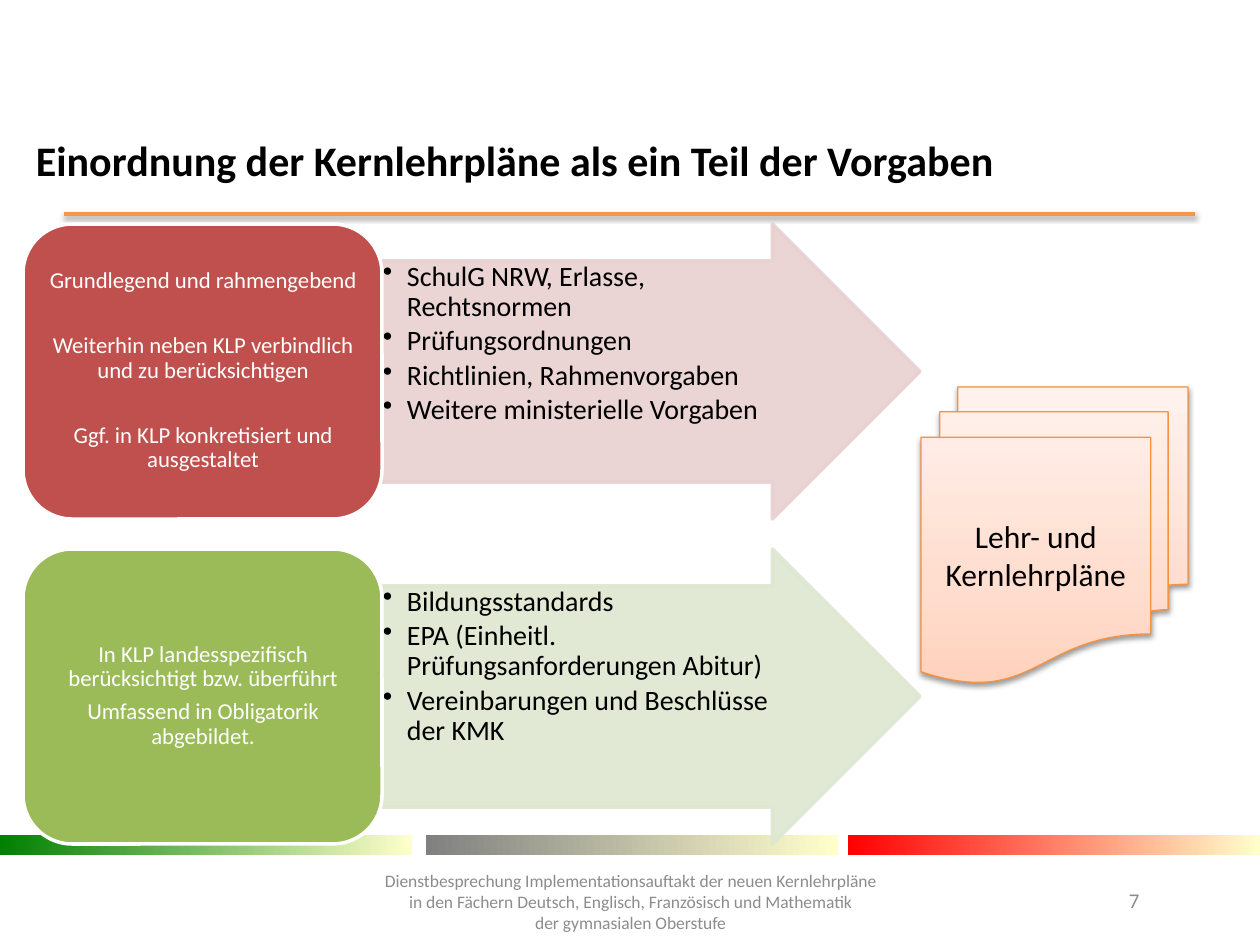
from copy import deepcopy

from lxml.etree import SubElement
from pptx import Presentation
from pptx.dml.color import RGBColor
from pptx.enum.shapes import MSO_CONNECTOR, MSO_SHAPE
from pptx.enum.text import MSO_ANCHOR, PP_ALIGN
from pptx.oxml.ns import qn
from pptx.util import Pt

EMU_PER_PX = 914400 / 126
BLACK, WHITE, GREY, CREAM = "000000", "FFFFFF", "8C8C8C", "FFFFCC"


def px(length):
    return round(length * EMU_PER_PX)


def color(value):
    return RGBColor.from_string(value)


def apply(target, values):
    for name, value in values.items():
        setattr(target, name, value)


class SlideBuilder:
    font_name = "Calibri"

    def __init__(self, slide):
        self.slide = slide

    def effects(self, shape, shadow):
        properties = shape._element.spPr
        for old in properties.findall(qn("a:effectLst")):
            properties.remove(old)
        effect_list = SubElement(properties, qn("a:effectLst"))
        if shadow:
            outer = SubElement(effect_list, qn("a:outerShdw"), blurRad="40000",
                               dist="20000", dir="5400000", rotWithShape="0")
            black = SubElement(outer, qn("a:srgbClr"), val=BLACK)
            SubElement(black, qn("a:alpha"), val="38000")

    def gradient(self, shape, stops, angle):
        fill = shape.fill
        fill.gradient()
        fill.gradient_angle = angle
        stop_list = shape._element.spPr.find(".//" + qn("a:gsLst"))
        while len(stop_list) < len(stops):
            stop_list.append(deepcopy(stop_list[-1]))
        for stop, (position, value) in zip(fill.gradient_stops, stops):
            stop.position = position
            stop.color.rgb = color(value)

    def shape(self, kind, box, fill, line=None, width=2, angle=0,
              opacity=None, adjustments=(), shadow=False):
        shape = self.slide.shapes.add_shape(kind, *map(px, box))
        if isinstance(fill, str):
            shape.fill.solid()
            shape.fill.fore_color.rgb = color(fill)
        else:
            self.gradient(shape, fill, angle)
        if line:
            shape.line.color.rgb = color(line)
            shape.line.width = Pt(width)
        else:
            shape.line.fill.background()
        for index, value in enumerate(adjustments):
            shape.adjustments[index] = value
        if opacity:
            for element in shape._element.spPr.iter(qn("a:srgbClr")):
                SubElement(element, qn("a:alpha"), val=str(opacity * 1000))
        self.effects(shape, shadow)
        return shape

    def line(self, start, end, value, width):
        line = self.slide.shapes.add_connector(
            MSO_CONNECTOR.STRAIGHT, *map(px, start + end))
        line.line.color.rgb = color(value)
        line.line.width = Pt(width)
        self.effects(line, True)

    def label(self, shape, paragraphs, size, value, align=PP_ALIGN.LEFT,
              anchor=MSO_ANCHOR.MIDDLE, insets=(13, 6), bold=False,
              spacing=1.0, gap=0, bullet_indent=0):
        frame = shape.text_frame
        side, edge = map(px, insets)
        apply(frame, dict(word_wrap=True, vertical_anchor=anchor,
                          margin_left=side, margin_right=side,
                          margin_top=edge, margin_bottom=edge))
        for index, text in enumerate(paragraphs):
            paragraph = frame.add_paragraph() if index else frame.paragraphs[0]
            paragraph.text = text
            if bullet_indent:
                properties = paragraph._p.get_or_add_pPr()
                properties.set("marL", str(px(bullet_indent)))
                properties.set("indent", str(-px(bullet_indent)))
                SubElement(properties, qn("a:buChar"), char="•")
            apply(paragraph, dict(alignment=align, line_spacing=spacing,
                                  space_before=Pt(gap if index else 0)))
            for run in paragraph.runs:
                apply(run.font, dict(name=self.font_name, size=Pt(size), bold=bold))
                run.font.color.rgb = color(value)

    def text(self, box, paragraphs, size, value, **style):
        shape = self.slide.shapes.add_textbox(*map(px, box))
        self.label(shape, paragraphs, size, value, **style)

    def row(self, top, card_color, arrow_color, card_texts, card_gap, bullets):
        """One card with the arrow that leads away from it."""
        self.shape(MSO_SHAPE.RIGHT_ARROW, (382, top, 538, 295), arrow_color,
                   arrow_color, opacity=90, adjustments=(0.75, 0.5))
        self.text((382, top + 37, 428, 221), bullets, 16, BLACK,
                  anchor=MSO_ANCHOR.TOP, insets=(1, 1), spacing=0.9,
                  gap=2.4, bullet_indent=24)
        self.shape(MSO_SHAPE.ROUNDED_RECTANGLE, (23, top, 359, 295),
                   card_color, WHITE)
        self.text((38, top + 14, 330, 266), card_texts, 13, WHITE,
                  align=PP_ALIGN.CENTER, insets=(6, 4), spacing=0.9, gap=card_gap)


def main():
    presentation = Presentation()
    presentation.slide_width = px(1260)
    presentation.slide_height = px(945)
    slide = presentation.slides.add_slide(presentation.slide_layouts[6])
    builder = SlideBuilder(slide)

    # Rule and footer bars
    builder.line((64, 214), (1195, 214), "F79646", 2)
    for left, value in ((0, "008000"), (426, "808080"), (848, "FF0000")):
        builder.shape(MSO_SHAPE.RECTANGLE, (left, 835, 412, 20),
                      ((0, value), (1, CREAM)))

    # Title
    builder.text((23, 135, 1134, 49),
                 ["Einordnung der Kernlehrpläne als ein Teil der Vorgaben"],
                 24, BLACK, bold=True)

    # Stack of curricula
    documents = builder.shape(
        MSO_SHAPE.FLOWCHART_MULTIDOCUMENT, (921, 387, 267, 296),
        ((0, "FFD2BD"), (0.35, "FFDED0"), (1, "FFF2ED")),
        line="F69240", width=0.75, angle=90, shadow=True)
    builder.label(documents, ["Lehr- und Kernlehrpläne"], 18, BLACK,
                  align=PP_ALIGN.CENTER)

    # Requirements
    builder.row(
        224, "C0504D", "E8D0D0",
        ["Grundlegend und rahmengebend",
         "Weiterhin neben KLP verbindlich und zu berücksichtigen",
         "Ggf. in KLP konkretisiert und ausgestaltet"], 23,
        ["SchulG NRW, Erlasse, Rechtsnormen", "Prüfungsordnungen",
         "Richtlinien, Rahmenvorgaben", "Weitere ministerielle Vorgaben"])
    builder.row(
        549, "9BBB59", "DEE7D1",
        ["In KLP landesspezifisch berücksichtigt bzw. überführt",
         "Umfassend in Obligatorik abgebildet."], 4.6,
        ["Bildungsstandards", "EPA (Einheitl. Prüfungsanforderungen Abitur)",
         "Vereinbarungen und Beschlüsse der KMK"])

    # Footer
    builder.text((1116, 882, 81, 50), ["7"], 12, GREY, anchor=MSO_ANCHOR.TOP)
    builder.text((323, 866, 615, 71),
                 ["Dienstbesprechung Implementationsauftakt der neuen Kernlehrpläne\v"
                  "in den Fächern Deutsch, Englisch, Französisch und Mathematik\v"
                  "der gymnasialen Oberstufe"],
                 10, GREY, align=PP_ALIGN.CENTER)

    presentation.save("out.pptx")


if __name__ == "__main__":
    main()
